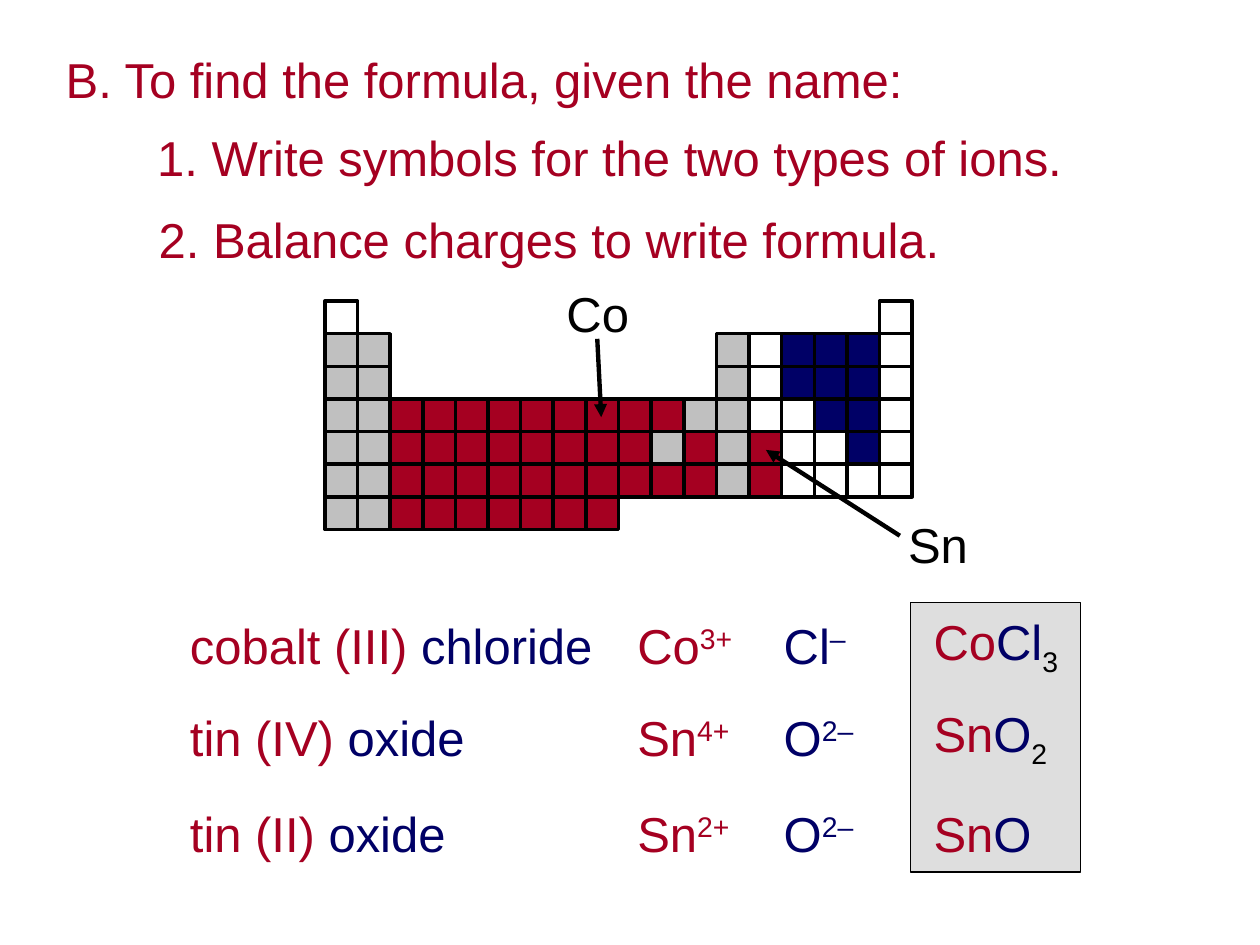
from lxml.etree import SubElement
from pptx import Presentation
from pptx.dml.color import RGBColor
from pptx.enum.shapes import MSO_CONNECTOR, MSO_SHAPE
from pptx.enum.text import MSO_ANCHOR, MSO_AUTO_SIZE, PP_ALIGN
from pptx.oxml.ns import qn
from pptx.util import Cm, Pt

RED = RGBColor(0xA5, 0x00, 0x21)
NAVY = RGBColor(0x00, 0x00, 0x66)
GREY = RGBColor(0xC0, 0xC0, 0xC0)
BLACK = RGBColor(0, 0, 0)
SUPER, SUB = 30000, -25000
LINE_HEIGHT = 1.45

HEADING = "B. To find the formula, given the name:"
STEPS = [
    ("1. Write symbols for the two types of ions.", 2.92, 2.44, 19.08),
    ("2. Balance charges to write formula.", 2.95, 4.09, 16.56),
]

ELEMENT_FILLS = {"r": RED, "n": NAVY, "g": GREY, "w": None}
PERIODS = [
    "w                w",
    "gg          gwnnnw",
    "gg          gwnnnw",
    "ggrrrrrrrrrggwwnnw",
    "ggrrrrrrrrgrgrwwnw",
    "ggrrrrrrrrrrgrwwww",
    "ggrrrrrrr",
]
TABLE_LEFT, TABLE_TOP, CELL = 6.55, 6.07, 11.84 / 18

CALLOUTS = [
    ("Co", (11.1, 5.59), (12.04, 6.83), (12.12, 8.41)),
    ("Sn", (17.96, 10.24), (18.14, 10.8), (15.44, 9.07)),
]

COLUMN_LEFTS = [3.58, 12.6, 15.55, 18.57]
ROW_TOPS = [12.27, 14.13, 16.06]
COMPOUNDS = [
    [
        (8.92, [("cobalt (III) ", RED, 0), ("chloride", NAVY, 0)]),
        (2.82, [("Co", RED, 0), ("3+", RED, SUPER)]),
        (2.08, [("Cl", NAVY, 0), ("–", NAVY, SUPER)]),
        (3.35, [("Co", RED, 0), ("Cl", NAVY, 0), ("3", BLACK, SUB)]),
    ],
    [
        (6.32, [("tin (IV) ", RED, 0), ("oxide", NAVY, 0)]),
        (2.77, [("Sn", RED, 0), ("4+", RED, SUPER)]),
        (2.31, [("O", NAVY, 0), ("2–", NAVY, SUPER)]),
        (3.12, [("Sn", RED, 0), ("O", NAVY, 0), ("2", BLACK, SUB)]),
    ],
    [
        (5.94, [("tin (II) ", RED, 0), ("oxide", NAVY, 0)]),
        (2.77, [("Sn", RED, 0), ("2+", RED, SUPER)]),
        (2.31, [("O", NAVY, 0), ("2–", NAVY, SUPER)]),
        (2.77, [("Sn", RED, 0), ("O", NAVY, 0)]),
    ],
]


def write(box, pieces, align=PP_ALIGN.LEFT, anchor=MSO_ANCHOR.MIDDLE, wrap=False):
    frame = box.text_frame
    frame.word_wrap = wrap
    frame.auto_size = MSO_AUTO_SIZE.SHAPE_TO_FIT_TEXT
    frame.vertical_anchor = anchor
    line = frame.paragraphs[0]
    line.alignment = align
    for text, color, baseline in pieces:
        run = line.add_run()
        run.text = text
        run.font.name = "Arial"
        run.font.size = Pt(28)
        run.font.color.rgb = color
        if baseline:
            run.font._element.set("baseline", str(baseline))


def add_text(shapes, left, top, width, pieces, **layout):
    box = shapes.add_textbox(Cm(left), Cm(top), Cm(width), Cm(LINE_HEIGHT))
    write(box, pieces, **layout)


def add_box(shapes, left, top, width, height, fill, line_width):
    box = shapes.add_shape(MSO_SHAPE.RECTANGLE, Cm(left), Cm(top), Cm(width), Cm(height))
    box.shadow.inherit = False
    box.line.color.rgb = BLACK
    box.line.width = Pt(line_width)
    if fill is None:
        box.fill.background()
    else:
        box.fill.solid()
        box.fill.fore_color.rgb = fill
    return box


def add_arrow(shapes, start, end):
    arrow = shapes.add_connector(MSO_CONNECTOR.STRAIGHT, *map(Cm, start + end))
    arrow.line.color.rgb = BLACK
    arrow.line.width = Pt(2.5)
    SubElement(arrow.line._get_or_add_ln(), qn("a:tailEnd"), type="triangle")
    SubElement(arrow._element.spPr, qn("a:effectLst"))


def main():
    deck = Presentation()
    deck.slide_width, deck.slide_height = Cm(25.4), Cm(19.05)
    slide = deck.slides.add_slide(deck.slide_layouts[5])
    shapes = slide.shapes

    answers = add_box(shapes, 18.36, 12.14, 3.43, 5.44, GREY, 0.75)
    grey = answers.fill._xPr.find(qn("a:solidFill"))[0]
    SubElement(grey, qn("a:alpha"), val="52000")

    title = shapes.title
    title.left, title.top = Cm(1.07), Cm(0.86)
    title.width, title.height = Cm(18.31), Cm(LINE_HEIGHT)
    write(title, [(HEADING, RED, 0)])
    for step, left, top, width in STEPS:
        add_text(shapes, left, top, width, [(step, RED, 0)])

    periodic_table = shapes.add_group_shape().shapes
    for row, period in enumerate(PERIODS):
        for column, kind in enumerate(period):
            if kind in ELEMENT_FILLS:
                add_box(periodic_table, TABLE_LEFT + column * CELL, TABLE_TOP + row * CELL,
                        CELL, CELL, ELEMENT_FILLS[kind], 2)

    for symbol, (left, top), start, end in CALLOUTS:
        callout = shapes.add_group_shape().shapes
        add_text(callout, left, top, 1.9, [(symbol, BLACK, 0)],
                 align=PP_ALIGN.CENTER, anchor=MSO_ANCHOR.TOP, wrap=True)
        add_arrow(callout, start, end)

    for top, compound in zip(ROW_TOPS, COMPOUNDS):
        for left, (width, pieces) in zip(COLUMN_LEFTS, compound):
            add_text(shapes, left, top, width, pieces)

    deck.save("out.pptx")


if __name__ == "__main__":
    main()
